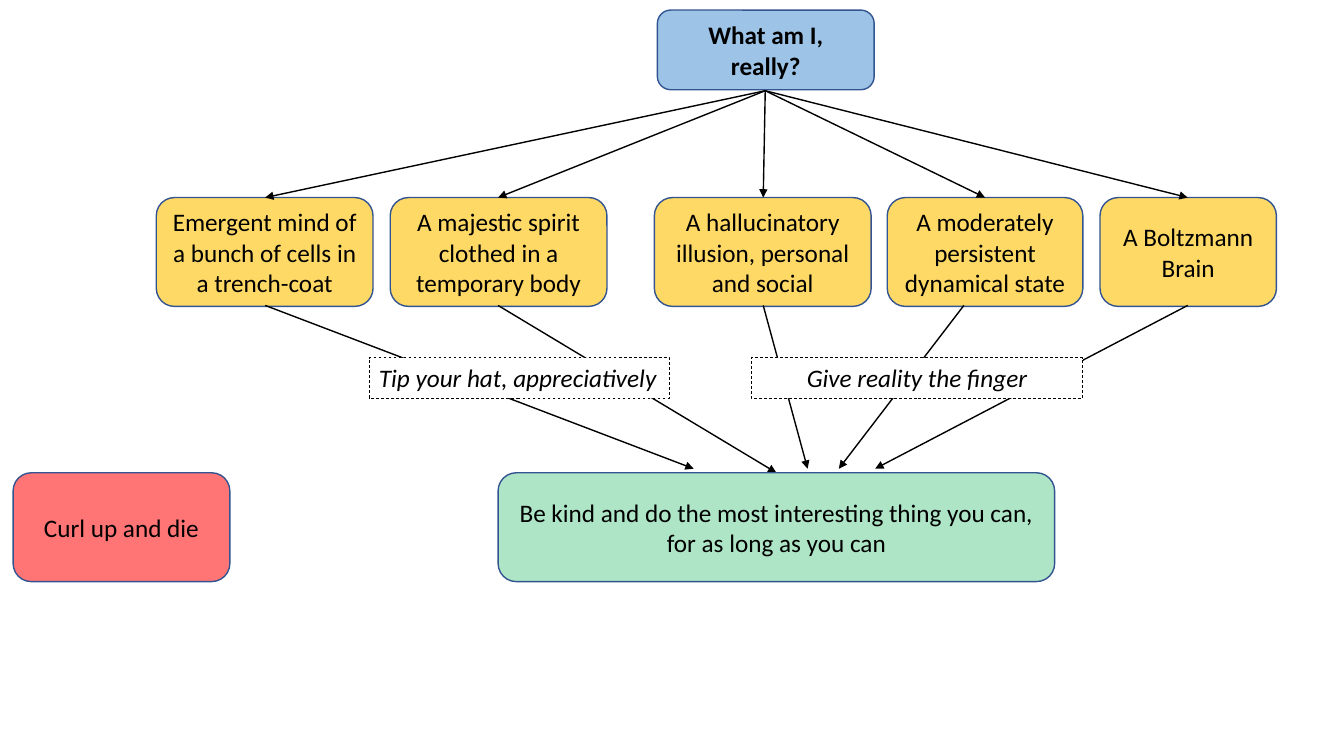
"""Build a flow chart slide of self-concepts leading to one piece of advice."""
from dataclasses import dataclass

from lxml import etree
from pptx import Presentation
from pptx.dml.color import RGBColor
from pptx.enum.dml import MSO_LINE
from pptx.enum.shapes import MSO_CONNECTOR, MSO_SHAPE
from pptx.enum.text import MSO_ANCHOR, MSO_AUTO_SIZE, PP_ALIGN
from pptx.oxml.ns import qn
from pptx.util import Inches, Pt

ROUND = MSO_SHAPE.ROUNDED_RECTANGLE
RECT = MSO_SHAPE.RECTANGLE
STRAIGHT = MSO_CONNECTOR.STRAIGHT
DASH = MSO_LINE.DASH
MIDDLE, TOP = MSO_ANCHOR.MIDDLE, MSO_ANCHOR.TOP
CENTER, LEFT = PP_ALIGN.CENTER, PP_ALIGN.LEFT
GROW = MSO_AUTO_SIZE.SHAPE_TO_FIT_TEXT

BLACK = RGBColor(0x00, 0x00, 0x00)
WHITE = RGBColor(0xFF, 0xFF, 0xFF)
NAVY = RGBColor(0x32, 0x54, 0x91)
BLUE = RGBColor(0x9D, 0xC3, 0xE6)
GOLD = RGBColor(0xFF, 0xD9, 0x66)
RED = RGBColor(0xFF, 0x00, 0x00)
GREEN = RGBColor(0x00, 0xB0, 0x50)

FONT = "Calibri"
ROW_TOP, ROW_END, TALL = 1.96, 3.03, 1.08
TIP_Y = 4.65
ROOT = (7.59, 0.9)


@dataclass(frozen=True)
class Box:
    text: str
    left: float
    top: float
    width: float
    height: float = TALL
    fill: RGBColor = GOLD
    alpha: int = 100
    bold: bool = False


@dataclass(frozen=True)
class Label:
    text: str
    left: float
    width: float
    wrap: bool
    align: PP_ALIGN


@dataclass(frozen=True)
class Path:
    head: float
    foot: float
    tip: float
    tip_y: float = TIP_Y


QUESTION = Box("What am I, really?", 6.52, 0.1, 2.15, 0.79, BLUE, bold=True)
DESPAIR = Box("Curl up and die", 0.13, 4.69, 2.15, fill=RED, alpha=54)
ADVICE = Box("Be kind and do the most interesting thing you can, for as long as you can",
             4.94, 4.69, 5.52, fill=GREEN, alpha=32)
SELVES = [
    Box("Emergent mind of a bunch of cells in a trench-coat", 1.55, ROW_TOP, 2.15),
    Box("A majestic spirit clothed in a temporary body", 3.87, ROW_TOP, 2.15),
    Box("A hallucinatory illusion, personal and social", 6.49, ROW_TOP, 2.15),
    Box("A moderately persistent dynamical state", 8.8, ROW_TOP, 1.94),
    Box("A Boltzmann Brain", 10.91, ROW_TOP, 1.75),
]
PATHS = [
    Path(2.63, 2.63, 6.88),
    Path(4.94, 4.94, 7.7, 4.69),
    Path(7.57, 7.57, 8.01),
    Path(9.77, 9.56, 8.32),
    Path(11.78, 11.78, 8.68),
]
LABELS = [
    Label("Tip your hat, appreciatively", 3.66, 2.98, False, LEFT),
    Label("Give reality the finger", 7.45, 3.29, True, CENTER),
]


def write(shape, text: str, *, bold: bool = False, italic: bool = False,
          align: PP_ALIGN = CENTER, anchor: MSO_ANCHOR = MIDDLE,
          wrap: bool = True) -> None:
    frame = shape.text_frame
    frame.word_wrap = wrap
    frame.vertical_anchor = anchor
    para = frame.paragraphs[0]
    para.alignment = align
    run = para.add_run()
    run.text = text
    font = run.font
    font.name, font.size = FONT, Pt(18)
    font.bold, font.italic = bold, italic
    font.color.rgb = BLACK


def add_form(slide, kind: MSO_SHAPE, left: float, top: float, width: float,
             height: float, fill: RGBColor, edge: RGBColor, weight: float):
    shape = slide.shapes.add_shape(
        kind, Inches(left), Inches(top), Inches(width), Inches(height))
    shape.shadow.inherit = False
    shape.fill.solid()
    shape.fill.fore_color.rgb = fill
    shape.line.color.rgb = edge
    shape.line.width = Pt(weight)
    return shape


def add_box(slide, box: Box) -> None:
    shape = add_form(slide, ROUND, box.left, box.top, box.width, box.height,
                     box.fill, NAVY, 1)
    if box.alpha < 100:
        tint = shape.fill._xPr.find(qn("a:solidFill"))[0]
        etree.SubElement(tint, qn("a:alpha"), val=str(box.alpha * 1000))
    write(shape, box.text, bold=box.bold)


def add_label(slide, label: Label) -> None:
    shape = add_form(slide, RECT, label.left, 3.55, label.width, 0.4,
                     WHITE, BLACK, 0.5)
    shape.line.dash_style = DASH
    write(shape, label.text, italic=True, align=label.align, anchor=TOP,
          wrap=label.wrap)
    shape.text_frame.auto_size = GROW


def add_arrow(slide, start: tuple[float, float], end: tuple[float, float]) -> None:
    arrow = slide.shapes.add_connector(
        STRAIGHT, *(Inches(value) for value in start + end))
    arrow.line.color.rgb = BLACK
    arrow.line.width = Pt(1)
    etree.SubElement(arrow.line._get_or_add_ln(), qn("a:tailEnd"), type="triangle")
    etree.SubElement(arrow._element.spPr, qn("a:effectLst"))


def main() -> None:
    deck = Presentation()
    deck.slide_width, deck.slide_height = Inches(13.33), Inches(7.5)
    slide = deck.slides.add_slide(deck.slide_layouts[6])
    for box in [*SELVES, QUESTION, DESPAIR]:
        add_box(slide, box)
    for path in PATHS:
        add_arrow(slide, ROOT, (path.head, ROW_TOP))
        add_arrow(slide, (path.foot, ROW_END), (path.tip, path.tip_y))
    add_box(slide, ADVICE)
    for label in LABELS:
        add_label(slide, label)
    deck.save("out.pptx")


if __name__ == "__main__":
    main()
